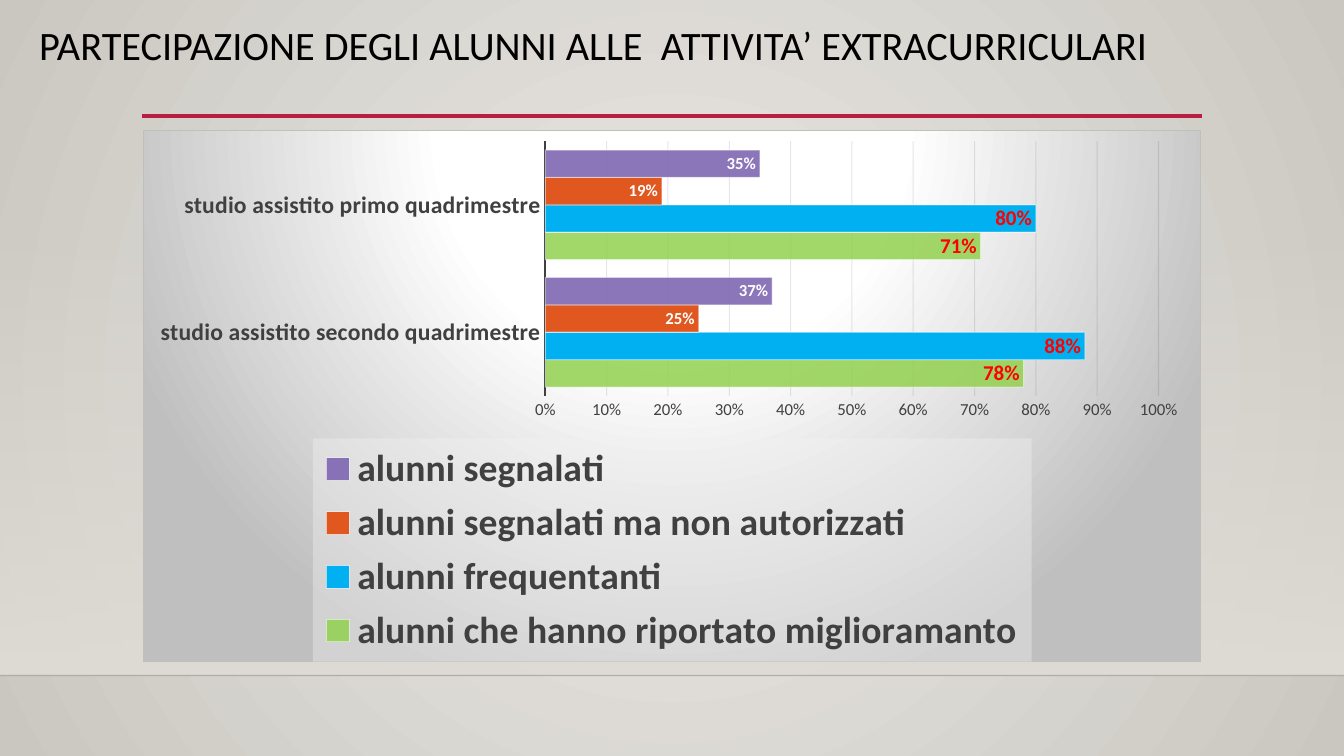
from dataclasses import dataclass

from lxml import etree
from pptx import Presentation
from pptx.chart.data import CategoryChartData
from pptx.dml.color import RGBColor
from pptx.enum.chart import XL_CHART_TYPE, XL_LABEL_POSITION, XL_LEGEND_POSITION, XL_TICK_MARK
from pptx.enum.shapes import MSO_CONNECTOR, MSO_SHAPE
from pptx.oxml import parse_xml
from pptx.oxml.ns import nsdecls, qn
from pptx.util import Pt

BAR = XL_CHART_TYPE.BAR_CLUSTERED
INSIDE_END = XL_LABEL_POSITION.INSIDE_END
BOTTOM = XL_LEGEND_POSITION.BOTTOM
NO_TICK = XL_TICK_MARK.NONE
STRAIGHT = MSO_CONNECTOR.STRAIGHT
RECTANGLE = MSO_SHAPE.RECTANGLE


@dataclass(frozen=True)
class Theme:
    font: str = "Calibri"
    ink: str = "000000"
    grey: str = "404040"
    white: str = "FFFFFF"
    red: str = "FF0000"
    accent: str = "B71E42"
    floor: str = "DFDBD5"
    floor_edge: str = "000001"
    wall: tuple = ("ECEAE7", "CAC7C1")
    panel_edge: str = "BFBFBF"
    grid: str = "0D0D0D"
    legend_fill: str = "F2F2F2"
    green: str = "92D050"
    blue: str = "00B0F0"
    orange: str = "E05720"
    purple: str = "795FAF"
    title_size: float = 28.8
    chart_size: float = 10
    category_size: float = 16.9
    scale_size: float = 12
    legend_size: float = 26.9
    label_size: float = 12
    label_large: float = 15


THEME = Theme()
PERCENT = "0%"
TITLE = "PARTECIPAZIONE DEGLI ALUNNI ALLE  ATTIVITA’ EXTRACURRICULARI"
PERIODS = ("studio assistito secondo quadrimestre", "studio assistito primo quadrimestre")
SERIES = (
    ("alunni che hanno riportato miglioramanto", (0.78, 0.71), THEME.green, 85, THEME.red, THEME.label_large),
    ("alunni frequentanti", (0.88, 0.8), THEME.blue, 100, THEME.red, THEME.label_large),
    ("alunni segnalati ma non autorizzati", (0.25, 0.19), THEME.orange, 100, THEME.white, THEME.label_size),
    ("alunni segnalati", (0.37, 0.35), THEME.purple, 85, THEME.white, THEME.label_size),
)


def set_font(font, size, color, bold=False):
    for name, value in {"name": THEME.font, "size": Pt(size), "bold": bold}.items():
        setattr(font, name, value)
    font.color.rgb = RGBColor.from_string(color)


def set_opacity(fill_parent, percent):
    for color in fill_parent.iter(qn("a:srgbClr")):
        etree.SubElement(color, qn("a:alpha")).set("val", str(percent * 1000))


def set_line(line, color, width, opacity=100):
    line.color.rgb = RGBColor.from_string(color)
    line.width = Pt(width)
    if opacity < 100:
        set_opacity(line.fill._xPr, opacity)


def gradient(stops, direction):
    marks = "".join(
        f'<a:gs pos="{pos * 1000}"><a:srgbClr val="{color}"><a:alpha val="{alpha * 1000}"/></a:srgbClr></a:gs>'
        for pos, color, alpha in stops
    )
    return parse_xml(f'<a:gradFill {nsdecls("a")} rotWithShape="1"><a:gsLst>{marks}</a:gsLst>{direction}</a:gradFill>')


def circle(left, top, right, bottom):
    sides = {"l": left, "t": top, "r": right, "b": bottom}
    rect = " ".join(f'{side}="{value * 1000}"' for side, value in sides.items())
    return f'<a:path path="circle"><a:fillToRect {rect}/></a:path>'


def replace_fill(properties, fill):
    properties.replace(properties.find(qn("a:solidFill")), fill)


def add_rule(slide, left, top, width, color, weight, opacity=100):
    rule = slide.shapes.add_connector(STRAIGHT, Pt(left), Pt(top), Pt(left + width), Pt(top))
    set_line(rule.line, color, weight, opacity)
    etree.SubElement(rule._element.spPr, qn("a:effectLst"))


def add_backdrop(slide, left, top, width, height):
    wall_fill = slide.background.fill
    wall_fill.solid()
    wall = gradient([(0, THEME.wall[0], 100), (100, THEME.wall[1], 100)], circle(50, 50, 50, 50))
    replace_fill(wall_fill._xPr, wall)
    floor = slide.shapes.add_shape(RECTANGLE, Pt(left), Pt(top), Pt(width), Pt(height))
    floor.shadow.inherit = False
    floor.line.fill.background()
    floor.fill.solid()
    fade = gradient([(0, THEME.floor, 0), (100, THEME.floor, 100)], '<a:lin ang="5400000" scaled="0"/>')
    replace_fill(floor._element.spPr, fade)
    add_rule(slide, left, top + height, width, THEME.floor_edge, 1, 20)


def add_title(slide, left, top, width, height):
    frame = slide.shapes.add_textbox(Pt(left), Pt(top), Pt(width), Pt(height)).text_frame
    frame.word_wrap = True
    heading = frame.paragraphs[0]
    heading.line_spacing = 0.9
    run = heading.add_run()
    run.text = TITLE
    set_font(run.font, THEME.title_size, THEME.ink)


def manual_layout(x, y, width, height, inner=False):
    target = '<c:layoutTarget val="inner"/>' if inner else ""
    modes = '<c:xMode val="edge"/><c:yMode val="edge"/>'
    sizes = {"x": x, "y": y, "w": width, "h": height}
    values = "".join(f'<c:{name} val="{value}"/>' for name, value in sizes.items())
    return parse_xml(f'<c:layout {nsdecls("c")}><c:manualLayout>{target}{modes}{values}</c:manualLayout></c:layout>')


def place(part, layout, position):
    for old in part.findall(qn("c:layout")):
        part.remove(old)
    part.insert(position, layout)


def style_axes(chart):
    periods, scale = chart.category_axis, chart.value_axis
    for axis in (periods, scale):
        axis.major_tick_mark = axis.minor_tick_mark = NO_TICK
    set_font(periods.tick_labels.font, THEME.category_size, THEME.grey, True)
    set_line(periods.format.line, THEME.grey, 1.5)
    limits = {"minimum_scale": 0, "maximum_scale": 1, "major_unit": 0.1, "has_major_gridlines": True}
    for name, value in limits.items():
        setattr(scale, name, value)
    set_font(scale.tick_labels.font, THEME.scale_size, THEME.grey)
    scale.tick_labels.number_format = PERCENT
    scale.tick_labels.number_format_is_linked = False
    scale.format.line.fill.background()
    set_line(scale.major_gridlines.format.line, THEME.grid, 0.75, 10)


def style_series(plot):
    plot.gap_width = 65
    plot.overlap = 0
    plot.vary_by_categories = False
    for bars, (_, _, color, opacity, label_color, label_size) in zip(plot.series, SERIES):
        bars.format.fill.solid()
        bars.format.fill.fore_color.rgb = RGBColor.from_string(color)
        if opacity < 100:
            set_opacity(bars.format.fill._xPr, opacity)
        set_line(bars.format.line, THEME.white, 0.75, 50)
        labels = bars.data_labels
        options = {"show_value": True, "position": INSIDE_END,
                   "number_format": PERCENT, "number_format_is_linked": False}
        for name, value in options.items():
            setattr(labels, name, value)
        set_font(labels.font, label_size, label_color, True)


def style_legend(chart):
    chart.has_legend = True
    legend = chart.legend
    legend.position = BOTTOM
    legend.include_in_layout = False
    set_font(legend.font, THEME.legend_size, THEME.grey, True)
    place(legend._element, manual_layout(0.16, 0.58, 0.68, 0.42), 1)
    box = parse_xml(f'<c:spPr {nsdecls("c", "a")}><a:solidFill><a:srgbClr val="{THEME.legend_fill}"/>'
                    '</a:solidFill></c:spPr>')
    set_opacity(box, 39)
    legend._element.find(qn("c:txPr")).addprevious(box)


def add_participation_chart(slide, left, top, width, height):
    data = CategoryChartData(number_format=PERCENT)
    data.categories = PERIODS
    for name, values, *_ in SERIES:
        data.add_series(name, values)
    chart = slide.shapes.add_chart(BAR, Pt(left), Pt(top), Pt(width), Pt(height), data).chart
    chart.has_title = False
    set_font(chart.font, THEME.chart_size, THEME.ink)
    style_axes(chart)
    style_series(chart.plots[0])
    style_legend(chart)
    space = chart._chartSpace
    place(space.chart.plotArea, manual_layout(0.38, 0.02, 0.58, 0.48, True), 0)
    panel = parse_xml(f'<c:spPr {nsdecls("c", "a")}><a:ln w="{Pt(0.75)}"><a:solidFill>'
                      f'<a:srgbClr val="{THEME.panel_edge}"/></a:solidFill></a:ln></c:spPr>')
    stops = [(0, THEME.white, 100), (39, THEME.white, 100), (100, THEME.panel_edge, 100)]
    panel.insert(0, gradient(stops, circle(50, -80, 50, 180)))
    space.find(qn("c:txPr")).addprevious(panel)


def main():
    deck = Presentation()
    deck.slide_width, deck.slide_height = Pt(960), Pt(540)
    slide = deck.slides.add_slide(deck.slide_layouts[6])
    add_backdrop(slide, 0, 159, 960, 323.5)
    add_rule(slide, 101.5, 82.8, 757, THEME.accent, 2.5)
    add_title(slide, 20.9, 15.1, 962, 46)
    add_participation_chart(slide, 102.2, 92.9, 756, 380)
    deck.save("out.pptx")


if __name__ == "__main__":
    main()
